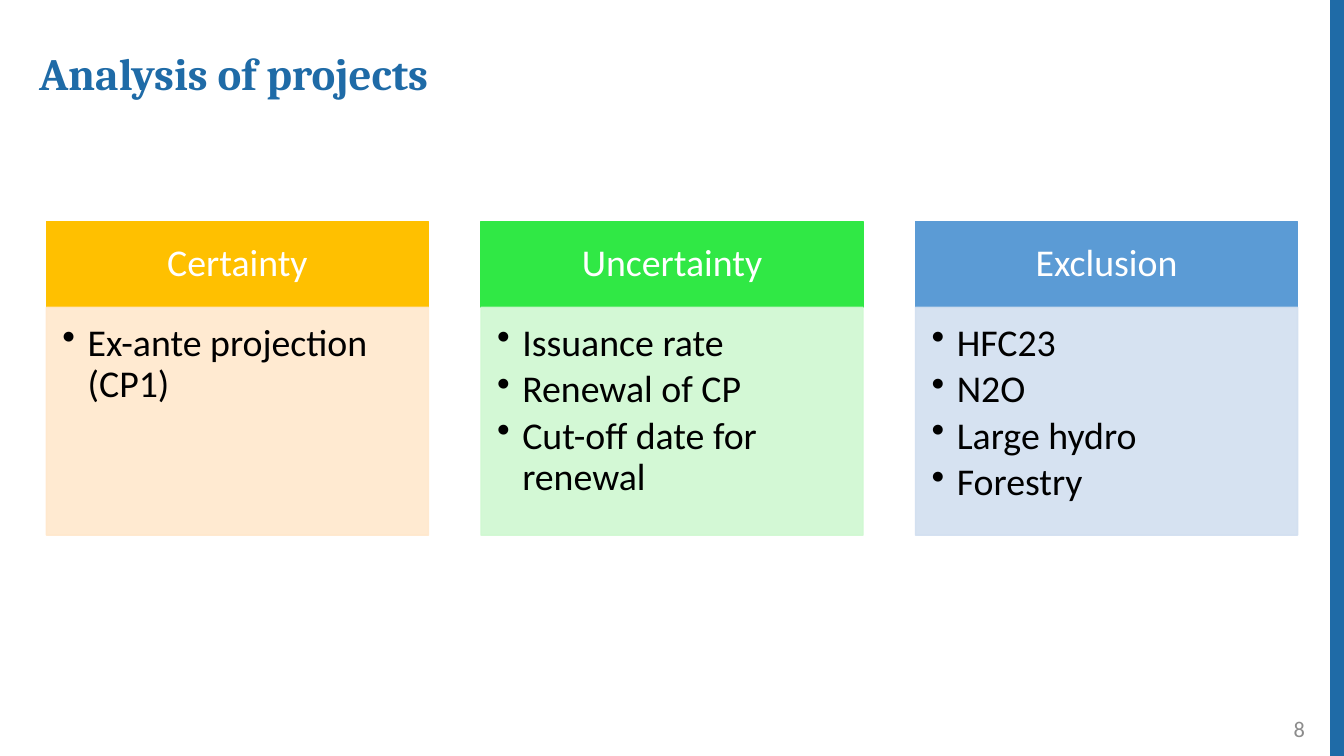
"""Build the slide that sorts projects into certainty, uncertainty and exclusion."""
from lxml import etree
from pptx import Presentation
from pptx.dml.color import RGBColor
from pptx.enum.shapes import MSO_CONNECTOR, MSO_SHAPE
from pptx.enum.text import MSO_ANCHOR, PP_ALIGN
from pptx.oxml.ns import qn
from pptx.util import Inches, Pt

RECTANGLE, STRAIGHT = MSO_SHAPE.RECTANGLE, MSO_CONNECTOR.STRAIGHT
TOP, MIDDLE = MSO_ANCHOR.TOP, MSO_ANCHOR.MIDDLE
LEFT, CENTER, RIGHT = PP_ALIGN.LEFT, PP_ALIGN.CENTER, PP_ALIGN.RIGHT

TITLE = "Analysis of projects"
PAGE = "8"
GROUPS = [
    ("Certainty", "FFC000", "FFE8CC", ["Ex-ante projection (CP1)"]),
    ("Uncertainty", "30E845", "CFF8D1",
     ["Issuance rate", "Renewal of CP", "Cut-off date for renewal"]),
    ("Exclusion", "5B9BD5", "D2DFF0",
     ["HFC23", "N2O", "Large hydro", "Forestry"]),
]
BLUE, GREY, WHITE, BLACK = "1F6BA7", "8C8C8C", "FFFFFF", "000000"

WIDTH, HEIGHT = 13.33, 7.5
MARGIN, CARD_WIDTH = 0.46, 3.79
GAP = (WIDTH - 2 * MARGIN - len(GROUPS) * CARD_WIDTH) / (len(GROUPS) - 1)
HEADER_TOP, HEADER_HEIGHT, LIST_HEIGHT = 2.2, 0.85, 2.26
INDENT = 0.25
DEFAULT_INSETS = (0.1, 0.05, 0.1, 0.05)
HEADER_INSETS = (0.21, 0.12, 0.21, 0.12)
LIST_INSETS = (0.16, 0.16, 0.21, 0.24)


def rgb(color):
    return RGBColor.from_string(color)


def write(shape, lines, size, color, font="Calibri", bold=False, align=LEFT,
          anchor=TOP, insets=DEFAULT_INSETS, spacing=0.9, bullets=False):
    frame = shape.text_frame
    frame.word_wrap = True
    frame.vertical_anchor = anchor
    (frame.margin_left, frame.margin_top,
     frame.margin_right, frame.margin_bottom) = map(Inches, insets)
    frame.text = "\n".join(lines)
    for paragraph in frame.paragraphs:
        paragraph.alignment = align
        paragraph.line_spacing = spacing
        if bullets:
            paragraph.space_after = Pt(4)
            properties = paragraph._p.get_or_add_pPr()
            properties.set("marL", str(Inches(INDENT)))
            properties.set("indent", str(-Inches(INDENT)))
            etree.SubElement(properties, qn("a:buChar"), char="•")
        paragraph.font.name = font
        paragraph.font.size = Pt(size)
        paragraph.font.bold = bold
        paragraph.font.color.rgb = rgb(color)


def add_panel(slide, left, top, height, color, opacity=100):
    panel = slide.shapes.add_shape(
        RECTANGLE, *map(Inches, (left, top, CARD_WIDTH, height)))
    panel.shadow.inherit = False
    panel.fill.solid()
    panel.fill.fore_color.rgb = rgb(color)
    panel.line.color.rgb = rgb(color)
    panel.line.width = Pt(1)
    if opacity < 100:
        for tint in panel._element.spPr.iter(qn("a:srgbClr")):
            etree.SubElement(tint, qn("a:alpha"), val=str(opacity * 1000))
    return panel


def add_label(slide, left, top, width, height):
    return slide.shapes.add_textbox(*map(Inches, (left, top, width, height)))


def main():
    deck = Presentation()
    deck.slide_width, deck.slide_height = Inches(WIDTH), Inches(HEIGHT)
    slide = deck.slides.add_slide(deck.slide_layouts[6])

    edge = slide.shapes.add_connector(
        STRAIGHT, *map(Inches, (WIDTH - 0.06, 0, WIDTH - 0.06, HEIGHT)))
    edge.line.color.rgb = rgb(BLUE)
    edge.line.width = Pt(12)
    etree.SubElement(edge._element.spPr, qn("a:effectLst"))

    write(add_label(slide, 0.29, 0.46, 11.96, 0.58), [TITLE], 32, BLUE,
          font="Cambria", bold=True)
    write(add_label(slide, 10.04, 7.03, 3, 0.4), [PAGE], 16, GREY,
          align=RIGHT, anchor=MIDDLE, spacing=1.0)

    for column, (heading, strong, pale, items) in enumerate(GROUPS):
        left = MARGIN + column * (CARD_WIDTH + GAP)
        header = add_panel(slide, left, HEADER_TOP, HEADER_HEIGHT, strong)
        write(header, [heading], 27, WHITE, align=CENTER, anchor=MIDDLE,
              insets=HEADER_INSETS)
        details = add_panel(slide, left, HEADER_TOP + HEADER_HEIGHT,
                            LIST_HEIGHT, pale, opacity=90)
        write(details, items, 27, BLACK, insets=LIST_INSETS, bullets=True)

    deck.save("out.pptx")


if __name__ == "__main__":
    main()
